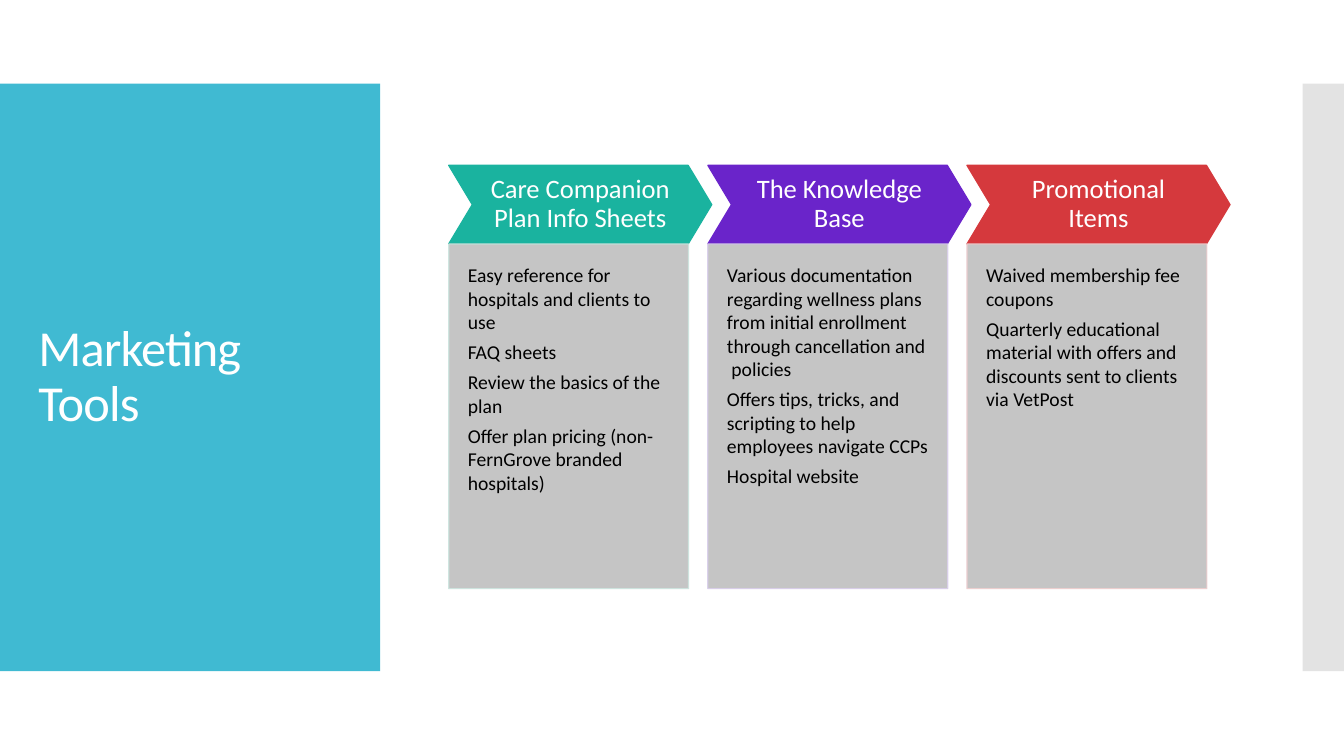
from dataclasses import dataclass

from lxml import etree
from pptx import Presentation
from pptx.dml import color
from pptx.enum import shapes, text
from pptx.oxml import ns
from pptx.util import Inches, Pt


@dataclass(frozen=True)
class Theme:
    font: str = "Calibri"
    title_size: float = 36
    header_size: float = 19
    body_size: float = 14
    white: str = "FFFFFF"
    black: str = "000000"
    panel: str = "40BAD2"
    edge: str = "C8C8C8"
    card: str = "BFBFBF"


theme = Theme()


def add_box(kind, bounds, fill, opacity=100, line=None):
    box = slide.shapes.add_shape(kind, *[Inches(length) for length in bounds])
    box.shadow.inherit = False
    paints = [(box.fill, fill)]
    box.fill.solid()
    if line:
        box.line.width = Pt(0.85)
        box.line.fill.solid()
        paints.append((box.line.fill, line))
    else:
        box.line.fill.background()
    for paint, value in paints:
        paint.fore_color.rgb = color.RGBColor.from_string(value)
    if opacity < 100:
        for tone in box.element.spPr.iter(ns.qn("a:srgbClr")):
            etree.SubElement(tone, ns.qn("a:alpha"), val=str(opacity * 1000))
    return box


def write(box, lines, size, ink, anchor, align, insets, leading=1.0, after=0):
    frame = box.text_frame
    frame.word_wrap = True
    frame.auto_size = text.MSO_AUTO_SIZE.NONE
    frame.vertical_anchor = anchor
    frame.margin_left, frame.margin_top, frame.margin_right, frame.margin_bottom = [
        Inches(inset) for inset in insets
    ]
    for index, line in enumerate(lines):
        para = frame.add_paragraph() if index else frame.paragraphs[0]
        para.text = line
        para.alignment = align
        para.line_spacing = leading
        para.space_before = Pt(0)
        para.space_after = Pt(after)
        para.font.name = theme.font
        para.font.size = Pt(size)
        para.font.color.rgb = color.RGBColor.from_string(ink)


deck = Presentation()
deck.slide_width, deck.slide_height = Inches(13.33), Inches(7.5)
slide = deck.slides.add_slide(deck.slide_layouts[5])

RECTANGLE = shapes.MSO_SHAPE.RECTANGLE
panel = add_box(RECTANGLE, (0, 0.83, 3.77, 5.83), theme.panel)
edge = add_box(RECTANGLE, (12.92, 0.83, 0.41, 5.83), theme.edge, opacity=50)

title = slide.shapes.title
edge.element.addnext(title.element)
title.left, title.top = Inches(0.28), Inches(1.23)
title.width, title.height = Inches(3.22), Inches(5.03)
write(title, ["Marketing Tools"], theme.title_size, theme.white,
      text.MSO_ANCHOR.MIDDLE, text.PP_ALIGN.LEFT, (0.1, 0.05, 0.1, 0.05), leading=0.9)
for span in title.text_frame.paragraphs[0].runs:
    span.font._element.set("spc", "-60")

columns = [
    ("Care Companion Plan Info Sheets", "1AB39F", "CDE5DF", [
        "Easy reference for hospitals and clients to use",
        "FAQ sheets",
        "Review the basics of the plan",
        "Offer plan pricing (non-FernGrove branded hospitals)",
    ]),
    ("The Knowledge Base", "6A24CA", "D8CDEA", [
        "Various documentation regarding wellness plans from initial enrollment "
        "through cancellation and  policies",
        "Offers tips, tricks, and scripting to help employees navigate CCPs",
        "Hospital website",
    ]),
    ("Promotional Items", "D5393D", "EFCECF", [
        "Waived membership fee coupons",
        "Quarterly educational material with offers and discounts sent to clients via VetPost",
    ]),
]

for index, (heading, accent, outline, points) in enumerate(columns):
    left = 4.45 + index * 2.57
    header = add_box(shapes.MSO_SHAPE.CHEVRON, (left, 1.64, 2.61, 0.78), accent, line=accent)
    header.adjustments[0] = 0.3
    write(header, [heading], theme.header_size, theme.white,
          text.MSO_ANCHOR.MIDDLE, text.PP_ALIGN.CENTER, (0.1, 0.1, 0.1, 0.1), leading=0.9)
    card = add_box(RECTANGLE, (left, 2.42, 2.38, 3.42), theme.card, opacity=90, line=outline)
    write(card, points, theme.body_size, theme.black,
          text.MSO_ANCHOR.TOP, text.PP_ALIGN.LEFT, (0.19, 0.19, 0.19, 0.38), after=4.6)

deck.save("out.pptx")
